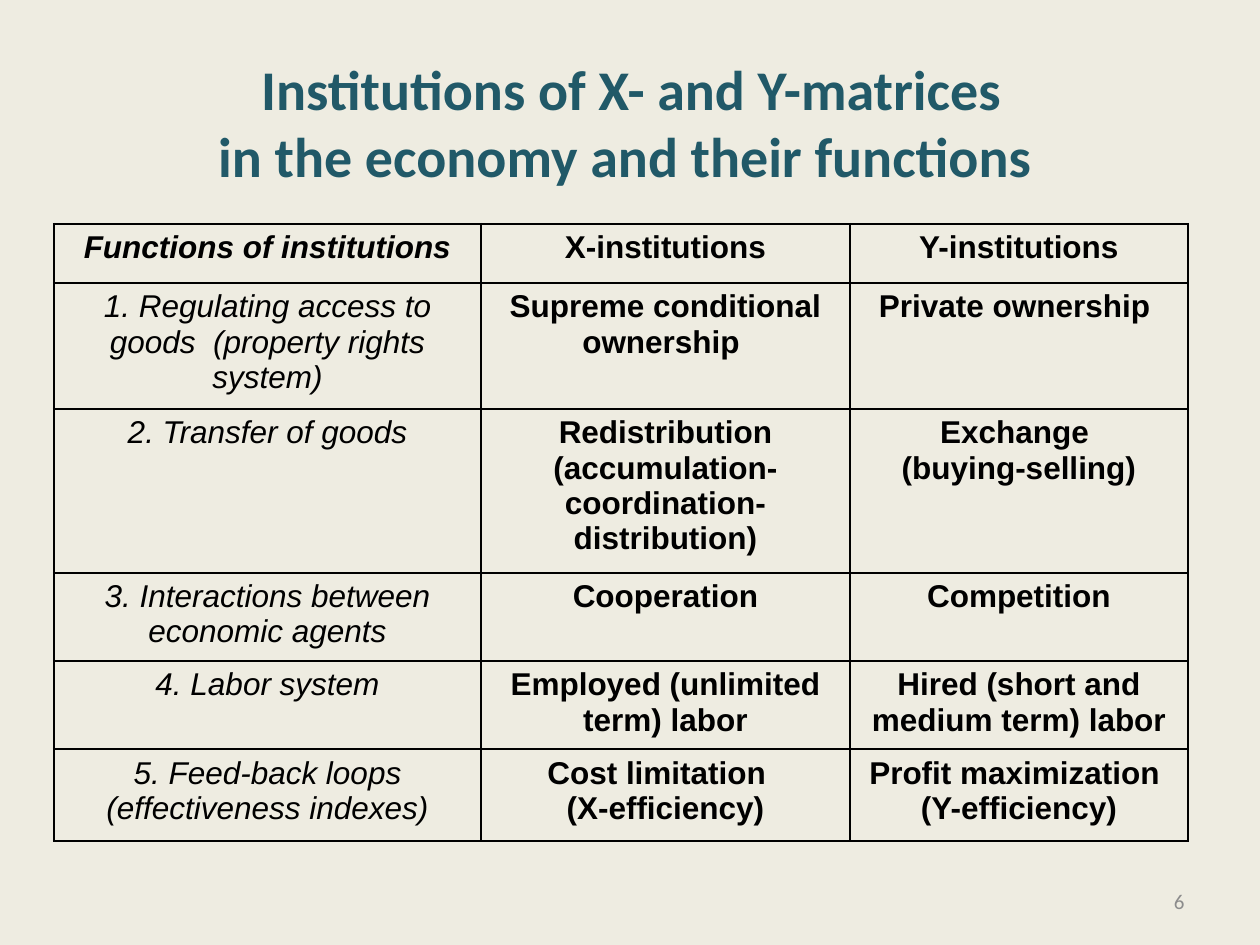
from lxml.etree import SubElement
from pptx import Presentation
from pptx.dml.color import RGBColor
from pptx.enum.text import MSO_ANCHOR, PP_ALIGN
from pptx.oxml.ns import qn
from pptx.util import Pt

PX = 914400 // 126
INK = "000000"


def color(value):
    return RGBColor.from_string(value)


def write(frame, lines, align, ink, **font):
    """Write one paragraph per line; a vertical tab breaks within a paragraph."""
    for index, line in enumerate(lines):
        para = frame.add_paragraph() if index else frame.paragraphs[0]
        para.text = line
        para.alignment = align
        for span in para.runs:
            for name, value in font.items():
                setattr(span.font, name, value)
            span.font.color.rgb = color(ink)


deck = Presentation()
deck.slide_width, deck.slide_height = 1260 * PX, 945 * PX
page = deck.slides.add_slide(deck.slide_layouts[6])
page.background.fill.solid()
page.background.fill.fore_color.rgb = color("EEECE1")

# Title and page number
title = " Institutions of X- and Y-matrices \vin the economy and their functions "
texts = [
    ((54, 37, 1155, 169), title, PP_ALIGN.CENTER, "215968", 32, True),
    ((903, 876, 294, 50), "6", PP_ALIGN.RIGHT, "8C8C8C", 12, False),
]
for bounds, text, align, ink, size, bold in texts:
    box = page.shapes.add_textbox(*[length * PX for length in bounds])
    box.text_frame.word_wrap = True
    box.text_frame.vertical_anchor = MSO_ANCHOR.MIDDLE
    write(box.text_frame, [text], align, ink, name="Calibri", size=Pt(size), bold=bold)

# Table of institutions
rows = [
    ("Functions of institutions", "X-institutions", "Y-institutions"),
    ("1. Regulating access to goods  (property rights system)",
     "Supreme conditional ownership ", "Private ownership "),
    ("2. Transfer of goods",
     "Redistribution (accumulation-coordination-distribution)",
     "Exchange \n(buying-selling)"),
    ("3. Interactions between economic agents", "Cooperation", "Competition"),
    ("4. Labor system", "Employed (unlimited term) labor",
     "Hired (short and medium term) labor"),
    ("5. Feed-back loops (effectiveness indexes)",
     "Cost limitation  \n(Х-efficiency)", "Profit maximization \n(Y-efficiency)"),
]
widths = [427, 369, 338]
heights = [59, 119, 154, 86, 83, 92]
table = page.shapes.add_table(
    len(rows), len(widths), 54 * PX, 224 * PX, sum(widths) * PX, sum(heights) * PX
).table
table.first_row = table.horz_banding = False
for column, width in zip(table.columns, widths):
    column.width = width * PX
for row, height in zip(table.rows, heights):
    row.height = height * PX

for row_index, row in enumerate(rows):
    for column_index, text in enumerate(row):
        cell = table.cell(row_index, column_index)
        write(cell.text_frame, text.split("\n"), PP_ALIGN.CENTER, INK,
              name="Arial", size=Pt(18),
              bold=row_index == 0 or column_index > 0, italic=column_index == 0)
        properties = cell._tc.get_or_add_tcPr()
        for side in ("a:lnL", "a:lnR", "a:lnT", "a:lnB"):
            line = SubElement(properties, qn(side), w=str(Pt(1.5)))
            SubElement(SubElement(line, qn("a:solidFill")), qn("a:srgbClr"), val=INK)
        cell.fill.background()

deck.save("out.pptx")
